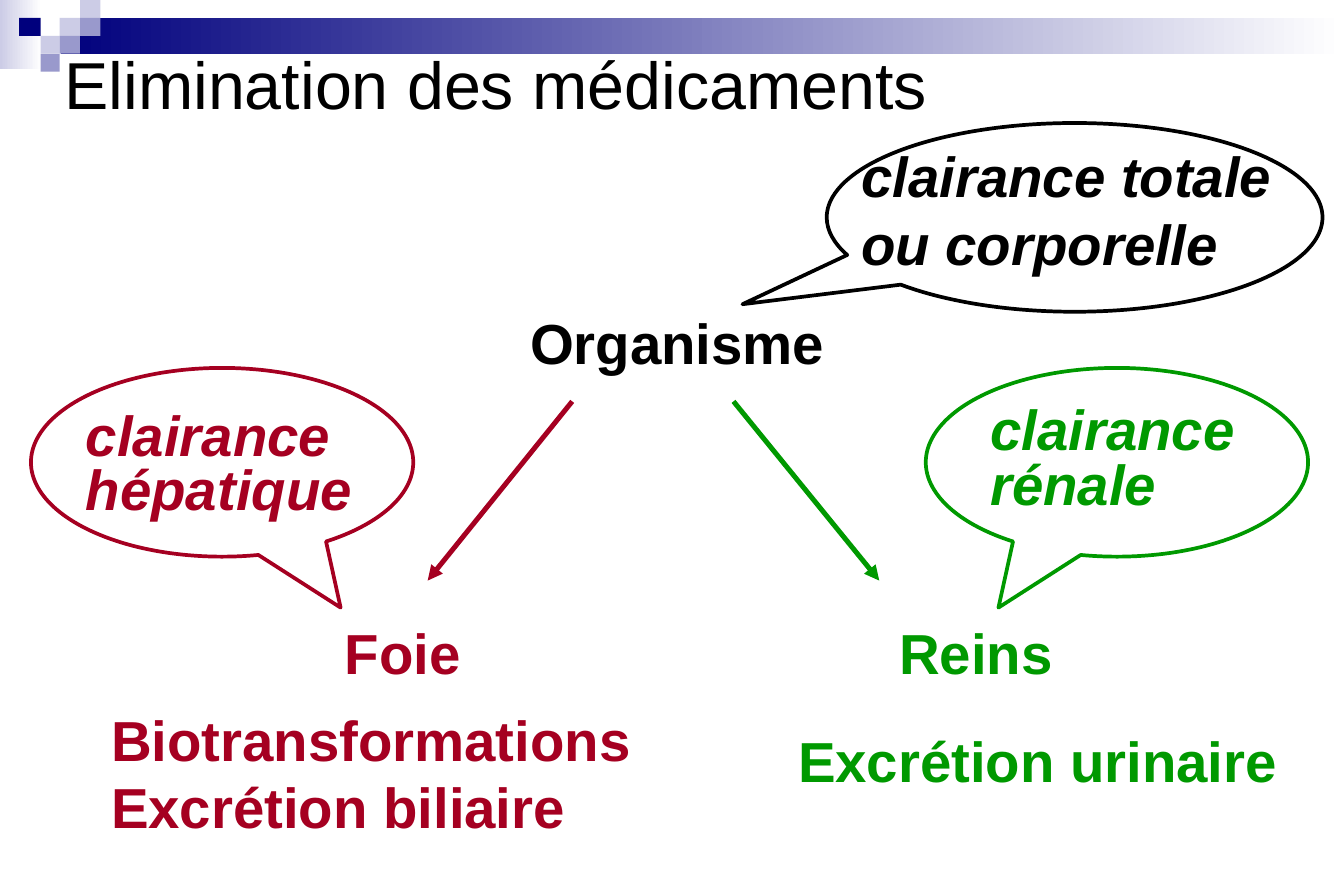
from dataclasses import dataclass
from typing import Optional

from pptx import Presentation
from pptx.dml.color import RGBColor
from pptx.enum.shapes import MSO_CONNECTOR, MSO_SHAPE
from pptx.enum.text import MSO_ANCHOR, PP_ALIGN
from pptx.oxml.ns import qn
from pptx.util import Inches, Pt
from lxml import etree

RECT = MSO_SHAPE.RECTANGLE
CALLOUT = MSO_SHAPE.OVAL_CALLOUT
STRAIGHT = MSO_CONNECTOR.STRAIGHT
MIDDLE = MSO_ANCHOR.MIDDLE
LEFT, CENTER, JUSTIFY = PP_ALIGN.LEFT, PP_ALIGN.CENTER, PP_ALIGN.JUSTIFY


@dataclass(frozen=True)
class Theme:
    font: str = "Arial"
    title_size: float = 40
    body_size: float = 34
    bubble_line: float = 2.25
    arrow_line: float = 3
    black: str = "000000"
    white: str = "FFFFFF"
    liver: str = "A50021"
    kidney: str = "009900"
    navy: str = "00007D"
    lilac: str = "9999CC"
    pale: str = "CCCCE6"


T = Theme()


@dataclass(frozen=True)
class Box:
    left: float
    top: float
    width: float
    height: float

    def emu(self) -> tuple:
        return tuple(Inches(v) for v in (self.left, self.top, self.width, self.height))


@dataclass(frozen=True)
class Block:
    box: Box
    fill: str
    fade_to: Optional[str] = None


@dataclass(frozen=True)
class Label:
    text: str
    box: Box
    color: str
    align: PP_ALIGN = CENTER
    size: float = T.body_size
    bold: bool = True
    italic: bool = False
    spacing: Optional[float] = None


@dataclass(frozen=True)
class Arrow:
    start: tuple[float, float]
    end: tuple[float, float]
    color: str


@dataclass(frozen=True)
class Bubble:
    box: Box
    tip: tuple[float, float]
    label: Label


# Header band and its small squares
BLOCKS = [
    Block(Box(0, 0, 0.35, 0.58), T.pale, T.white),
    Block(Box(0.51, 0.15, 10.74, 0.3), T.navy, T.white),
]
COL_EDGES = [0.16, 0.34, 0.5, 0.67, 0.84]
ROW_HEIGHT = 0.15
SQUARES = [  # column, row, colour
    (2, 1, T.pale), (3, 0, T.pale), (3, 1, T.lilac), (1, 2, T.pale),
    (0, 1, T.navy), (2, 2, T.lilac), (1, 3, T.lilac),
]
BLOCKS += [
    Block(Box(COL_EDGES[c], r * ROW_HEIGHT, COL_EDGES[c + 1] - COL_EDGES[c], ROW_HEIGHT), color)
    for c, r, color in SQUARES
]

# Title, organs and elimination routes
LABELS = [
    Label("Elimination des médicaments", Box(0.43, 0.36, 9.78, 0.67), T.black,
          LEFT, T.title_size, bold=False),
    Label("Organisme", Box(3.81, 2.53, 3.72, 0.67), T.black),
    Label("Foie", Box(2.55, 5.13, 1.64, 0.66), T.liver),
    Label("Biotransformations\nExcrétion biliaire", Box(0.82, 6.03, 5.11, 0.87),
          T.liver, JUSTIFY),
    Label("Reins", Box(7.22, 5.13, 1.9, 0.66), T.kidney),
    Label("Excrétion urinaire", Box(6.57, 6.03, 4.49, 0.67), T.kidney, JUSTIFY),
]

ARROWS = [
    Arrow((4.79, 3.36), (3.58, 4.86), T.liver),
    Arrow((6.14, 3.36), (7.36, 4.86), T.kidney),
]

# Clearance bubbles; the tip is relative to the bubble's centre
BUBBLES = [
    Bubble(Box(0.26, 3.08, 3.2, 1.58), (0.31, 0.77),
           Label("clairance\nhépatique", Box(0.61, 3.55, 2.6, 0.73), T.liver,
                 JUSTIFY, italic=True, spacing=0.8)),
    Bubble(Box(7.75, 3.08, 3.2, 1.58), (-0.31, 0.77),
           Label("clairance\nrénale", Box(8.18, 3.5, 2.51, 0.73), T.kidney,
                 JUSTIFY, italic=True, spacing=0.8)),
    Bubble(Box(6.92, 1.03, 4.15, 1.58), (-0.67, 0.46),
           Label("clairance totale\nou corporelle", Box(7.1, 1.42, 3.89, 0.66),
                 T.black, JUSTIFY, italic=True)),
]


def rgb(color: str) -> RGBColor:
    return RGBColor.from_string(color)


def add_block(s, block: Block) -> None:
    sp = s.shapes.add_shape(RECT, *block.box.emu())
    sp.shadow.inherit = False
    sp.line.fill.background()
    if block.fade_to:
        sp.fill.gradient()
        sp.fill.gradient_angle = 0
        for stop, color in zip(sp.fill.gradient_stops, (block.fill, block.fade_to)):
            stop.color.rgb = rgb(color)
    else:
        sp.fill.solid()
        sp.fill.fore_color.rgb = rgb(block.fill)


def add_label(s, label: Label) -> None:
    tf = s.shapes.add_textbox(*label.box.emu()).text_frame
    tf.word_wrap = True
    tf.vertical_anchor = MIDDLE
    tf.margin_left = tf.margin_right = Inches(0.11)
    tf.margin_top = tf.margin_bottom = Inches(0.05)
    tf.text = label.text
    for p in tf.paragraphs:
        p.alignment = label.align
        if label.spacing:
            p.line_spacing = label.spacing
        for r in p.runs:
            r.font.name = T.font
            r.font.size = Pt(label.size)
            r.font.bold = label.bold
            r.font.italic = label.italic
            r.font.color.rgb = rgb(label.color)


def add_arrow(s, arrow: Arrow) -> None:
    points = [Inches(v) for v in arrow.start + arrow.end]
    line = s.shapes.add_connector(STRAIGHT, *points)
    line.line.color.rgb = rgb(arrow.color)
    line.line.width = Pt(T.arrow_line)
    etree.SubElement(line.line._get_or_add_ln(), qn("a:tailEnd"), type="triangle")
    etree.SubElement(line._element.spPr, qn("a:effectLst"))


def add_bubble(s, bubble: Bubble) -> None:
    add_label(s, bubble.label)
    sp = s.shapes.add_shape(CALLOUT, *bubble.box.emu())
    sp.shadow.inherit = False
    sp.fill.background()
    sp.line.color.rgb = rgb(bubble.label.color)
    sp.line.width = Pt(T.bubble_line)
    for i, offset in enumerate(bubble.tip):
        sp.adjustments[i] = offset


def main() -> None:
    prs = Presentation()
    prs.slide_width, prs.slide_height = Inches(11.25), Inches(7.5)
    s = prs.slides.add_slide(prs.slide_layouts[6])
    for block in BLOCKS:
        add_block(s, block)
    for label in LABELS:
        add_label(s, label)
    for arrow in ARROWS:
        add_arrow(s, arrow)
    for bubble in BUBBLES:
        add_bubble(s, bubble)
    prs.save("out.pptx")


if __name__ == "__main__":
    main()
